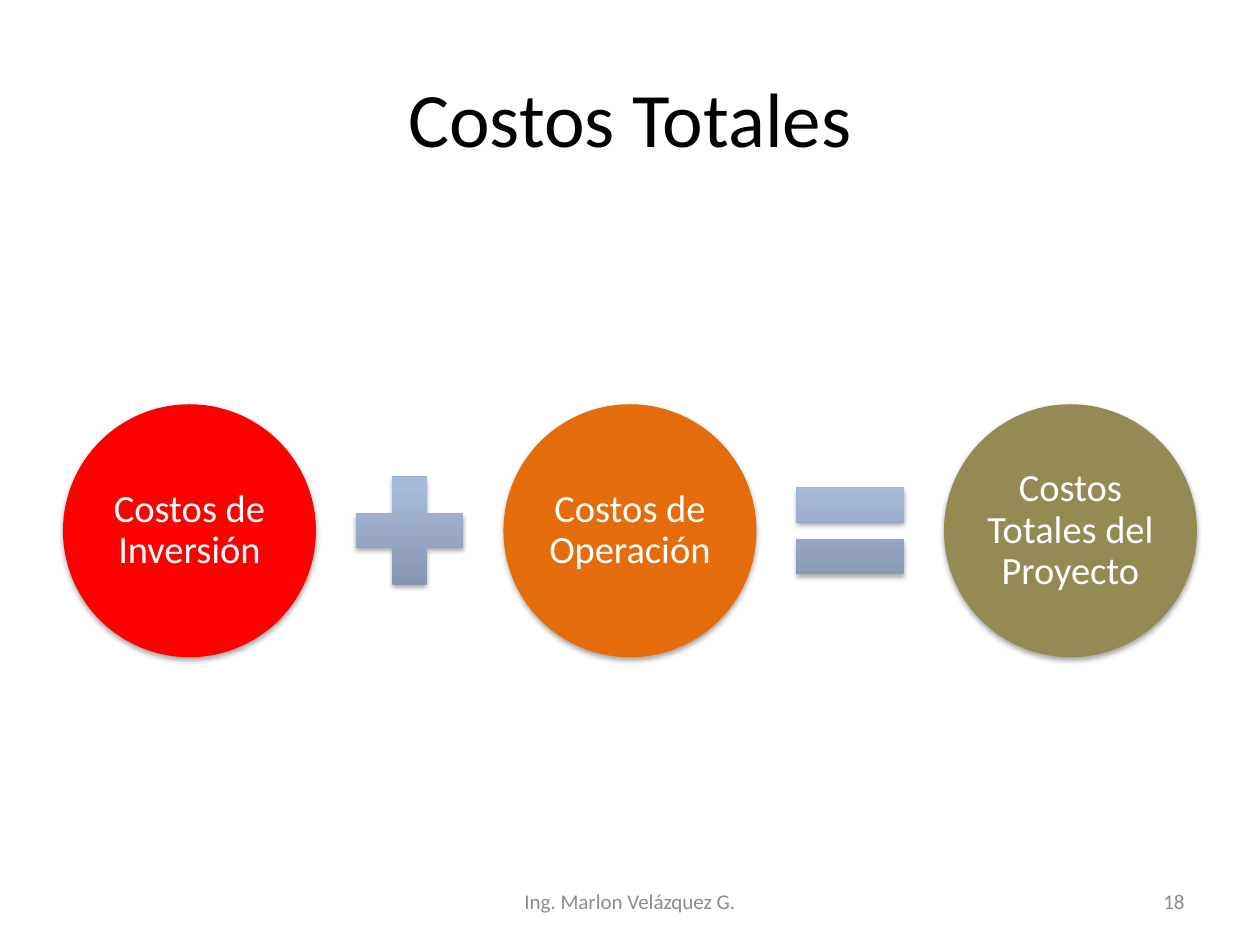
from dataclasses import dataclass

from lxml import etree
from pptx import Presentation
from pptx import util as u
from pptx.dml.color import RGBColor
from pptx.enum import shapes, text
from pptx.oxml.ns import qn


@dataclass(frozen=True)
class Theme:
    font: str = "Calibri"
    title_size: int = 44
    circle_size: int = 22
    footer_size: int = 12
    title: str = "000000"
    on_circle: str = "FFFFFF"
    footer: str = "8C8C8C"
    investment: str = "FF0000"
    operation: str = "E46C0A"
    total: str = "948A54"
    symbol_stops: tuple = ((0, "818FA8"), (0.8, "A7B9DA"))
    shadow: str = "000000"


class SlideBuilder:
    """Draws styled elements on the current slide."""

    def __init__(self, slide, theme):
        self.slide = slide
        self.theme = theme

    def set_text(self, frame, wording, size, color, align):
        frame.text = wording
        frame.word_wrap = True
        frame.vertical_anchor = text.MSO_ANCHOR.MIDDLE
        para = frame.paragraphs[0]
        para.alignment = align
        for span in para.runs:
            span.font.name = self.theme.font
            span.font.size = u.Pt(size)
            span.font.color.rgb = RGBColor.from_string(color)
        return para

    def label(self, wording, left, top, width, height, size, color,
              align=text.PP_ALIGN.CENTER):
        box = self.slide.shapes.add_textbox(
            u.Cm(left), u.Cm(top), u.Cm(width), u.Cm(height))
        self.set_text(box.text_frame, wording, size, color, align)

    def shadowed(self, kind, center_x, center_y, side):
        shape = self.slide.shapes.add_shape(
            kind, u.Cm(center_x - side / 2), u.Cm(center_y - side / 2),
            u.Cm(side), u.Cm(side))
        shape.line.fill.background()
        shape.shadow.inherit = False
        effects = shape.element.spPr.find(qn("a:effectLst"))
        shadow = etree.SubElement(
            effects, qn("a:outerShdw"), blurRad=str(u.Pt(3.1)),
            dist=str(u.Pt(1.8)), dir="5400000", rotWithShape="0")
        color = etree.SubElement(shadow, qn("a:srgbClr"), val=self.theme.shadow)
        etree.SubElement(color, qn("a:alpha"), val="35000")
        return shape

    def circle(self, wording, fill, center_x, center_y, side=5.1):
        shape = self.shadowed(shapes.MSO_SHAPE.OVAL, center_x, center_y, side)
        shape.fill.solid()
        shape.fill.fore_color.rgb = RGBColor.from_string(fill)
        frame = shape.text_frame
        frame.margin_left = frame.margin_right = u.Cm(0.08)
        frame.margin_top = frame.margin_bottom = u.Cm(0.08)
        para = self.set_text(frame, wording, self.theme.circle_size,
                             self.theme.on_circle, text.PP_ALIGN.CENTER)
        para.line_spacing = 0.9

    def symbol(self, kind, center_x, center_y, side=2.95):
        shape = self.shadowed(kind, center_x, center_y, side)
        shape.fill.gradient()
        shape.fill.gradient_angle = 90
        for stop, (position, color) in zip(shape.fill.gradient_stops,
                                           self.theme.symbol_stops):
            stop.position = position
            stop.color.rgb = RGBColor.from_string(color)


def main():
    theme = Theme()
    deck = Presentation()
    deck.slide_width, deck.slide_height = u.Cm(25.4), u.Cm(19.05)
    page = SlideBuilder(deck.slides.add_slide(deck.slide_layouts[6]), theme)

    page.label("Costos Totales", 1.27, 0.76, 22.86, 3.18,
               theme.title_size, theme.title)

    middle_x, middle_y, step = 12.7, 10.7, 4.44
    circles = (("Costos de Inversión", theme.investment),
               ("Costos de Operación", theme.operation),
               ("Costos Totales del Proyecto", theme.total))
    for index, (wording, fill) in enumerate(circles):
        page.circle(wording, fill, middle_x + (index - 1) * 2 * step, middle_y)

    page.symbol(shapes.MSO_SHAPE.MATH_PLUS, middle_x - step, middle_y)
    page.symbol(shapes.MSO_SHAPE.MATH_EQUAL, middle_x + step, middle_y)

    page.label("Ing. Marlon Velázquez G.", 8.68, 17.65, 8.04, 1.02,
               theme.footer_size, theme.footer)
    page.label("18", 18.2, 17.65, 5.93, 1.02,
               theme.footer_size, theme.footer, text.PP_ALIGN.RIGHT)
    deck.save("out.pptx")


if __name__ == "__main__":
    main()
